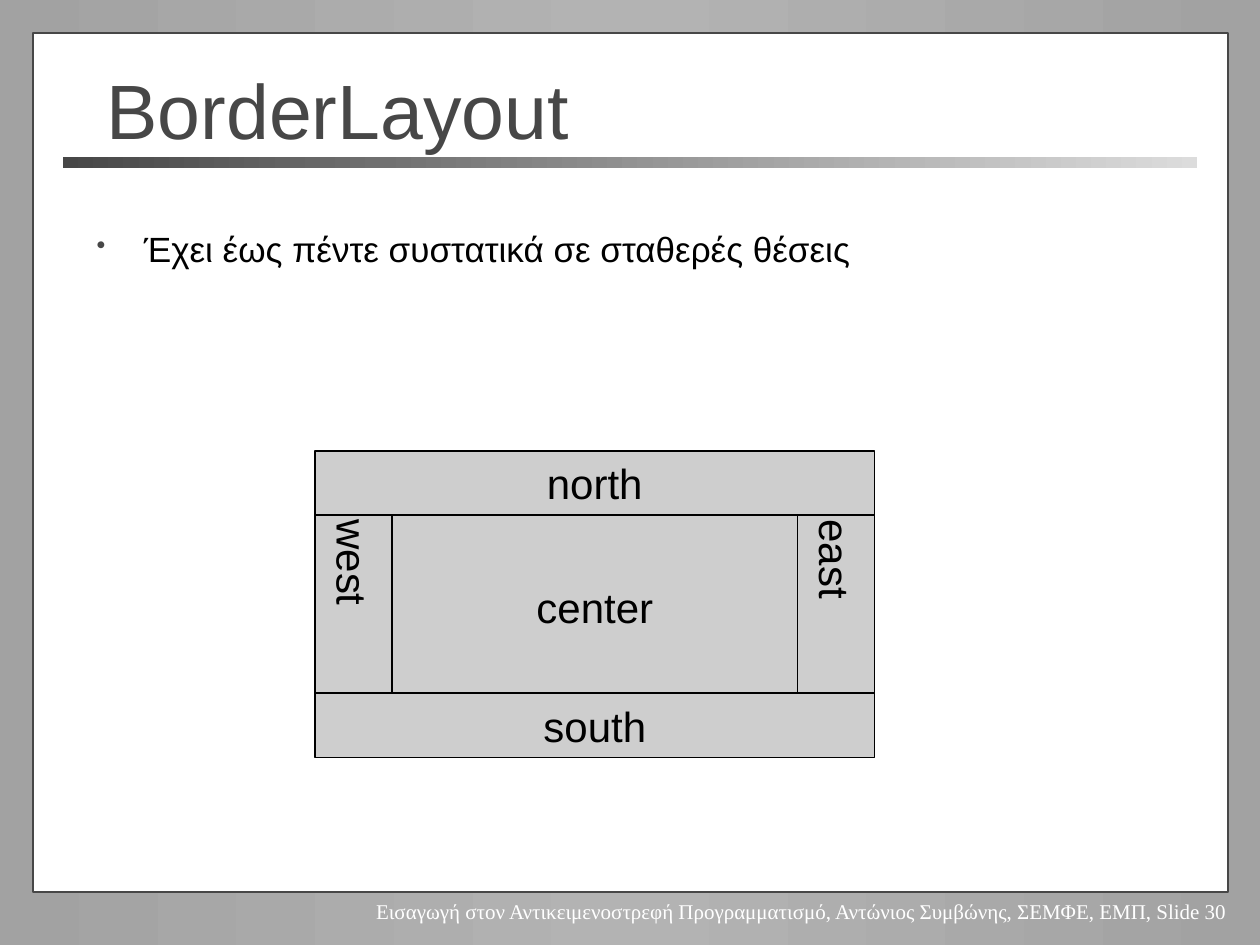
"""Builds a slide that shows the five regions of BorderLayout."""
from dataclasses import dataclass

from lxml.etree import SubElement
from pptx import Presentation
from pptx.dml.color import RGBColor
from pptx.enum.shapes import MSO_SHAPE as Shape
from pptx.enum.text import MSO_ANCHOR as Anchor, PP_ALIGN as Align
from pptx.oxml.ns import qn
from pptx.util import Cm, Pt

TITLE = "BorderLayout"
BULLET = "Έχει έως πέντε συστατικά σε σταθερές θέσεις"
FOOTER = ("Εισαγωγή στον Αντικειμενοστρεφή Προγραμματισμό, "
          "Αντώνιος Συμβώνης, ΣΕΜΦΕ, ΕΜΠ, Slide 30")


@dataclass(frozen=True)
class Theme:
    dark: str = "474747"
    black: str = "000000"
    white: str = "FFFFFF"
    region: str = "CECECE"
    backdrop: tuple = ((0, "A2A2A2"), (50, "B3B3B3"), (100, "A2A2A2"))
    rule: tuple = ((0, "474747"), (100, "DCDCDC"))
    font: str = "Arial"
    footer_font: str = "Times New Roman"
    title_size: int = 44
    region_size: int = 24
    body_size: int = 20
    footer_size: int = 12


THEME = Theme()

LEFT, TOP, WIDTH = 6.35, 9.09, 11.28
BAND, SIDE, MIDDLE = 1.3, 1.55, 3.58
MIDDLE_TOP = TOP + BAND
SOUTH_TOP = MIDDLE_TOP + MIDDLE
REGIONS = [
    ("center", (LEFT + SIDE, MIDDLE_TOP, WIDTH - 2 * SIDE, MIDDLE)),
    ("west", (LEFT, MIDDLE_TOP, SIDE, MIDDLE)),
    ("east", (LEFT + WIDTH - SIDE, MIDDLE_TOP, SIDE, MIDDLE)),
    ("south", (LEFT, SOUTH_TOP, WIDTH, BAND)),
    ("north", (LEFT, TOP, WIDTH, BAND)),
]


def set_gradient(owner, fill, stops):
    """Fill from left to right with the given stops."""
    fill.gradient()
    fill.gradient_angle = 0
    stop_list = owner.element.find(".//" + qn("a:gsLst"))
    for stop in list(stop_list):
        stop_list.remove(stop)
    for position, color in stops:
        stop = SubElement(stop_list, qn("a:gs"), pos=str(position * 1000))
        SubElement(stop, qn("a:srgbClr"), val=color)


def add_box(slide, box, fill=None, line=None):
    """Add a flat rectangle."""
    shape = slide.shapes.add_shape(Shape.RECTANGLE, *map(Cm, box))
    shape.shadow.inherit = False
    if fill:
        shape.fill.solid()
        shape.fill.fore_color.rgb = RGBColor.from_string(fill)
    if line:
        shape.line.color.rgb = RGBColor.from_string(line)
        shape.line.width = Pt(1)
    else:
        shape.line.fill.background()
    return shape


def write(shape, text, *, size, color=THEME.black, font=THEME.font,
          align=Align.LEFT, anchor=Anchor.MIDDLE, wrap=True, before=0):
    """Put one formatted paragraph in a shape and return it."""
    frame = shape.text_frame
    frame.word_wrap = wrap
    frame.vertical_anchor = anchor
    frame.margin_left = frame.margin_right = Cm(0.25)
    frame.margin_top = frame.margin_bottom = Cm(0.13)
    paragraph = frame.paragraphs[0]
    paragraph.alignment = align
    paragraph.space_before = Pt(before)
    run = paragraph.add_run()
    run.text = text
    run.font.size = Pt(size)
    run.font.name = font
    run.font.color.rgb = RGBColor.from_string(color)
    return paragraph


def add_bullet(paragraph, color):
    """Give a paragraph a small hanging bullet."""
    properties = paragraph._p.get_or_add_pPr()
    properties.set("marL", str(Cm(0.95)))
    properties.set("indent", str(-Cm(0.95)))
    bullet_color = SubElement(properties, qn("a:buClr"))
    SubElement(bullet_color, qn("a:srgbClr"), val=color)
    SubElement(properties, qn("a:buSzPct"), val="75000")
    SubElement(properties, qn("a:buChar"), char="•")


def add_frame(slide):
    """Add the backdrop, the white panel, the rule and the footer."""
    set_gradient(slide, slide.background.fill, THEME.backdrop)
    add_box(slide, (0.66, 0.66, 24.1, 17.32), THEME.white, THEME.dark)
    rule = add_box(slide, (1.27, 3.17, 22.86, 0.21))
    set_gradient(rule, rule.fill, THEME.rule)
    footer = slide.shapes.add_textbox(*map(Cm, (6.35, 17.98, 18.64, 0.77)))
    write(footer, FOOTER, size=THEME.footer_size, color=THEME.white,
          font=THEME.footer_font, align=Align.RIGHT, anchor=Anchor.TOP, wrap=False)


def add_title(slide):
    """Place the title above the panel."""
    title = slide.shapes.title
    slide.shapes.element.append(title.element)
    title.left, title.top, title.width, title.height = map(Cm, (1.9, 1.4, 21.6, 1.57))
    write(title, TITLE, size=THEME.title_size, color=THEME.dark)


def add_region(slide, name, box):
    """Add one region; the side regions have turned text."""
    shape = add_box(slide, box, THEME.region, THEME.black)
    turned = name in ("west", "east")
    write(shape, name, size=THEME.region_size,
          align=Align.LEFT if turned else Align.CENTER)
    frame = shape.text_frame
    if turned:
        frame.margin_top = Cm(0.08)
        frame._txBody.bodyPr.set("vert", "eaVert")
    elif name == "center":
        frame.margin_top = Cm(0.25)


def main():
    presentation = Presentation()
    presentation.slide_width, presentation.slide_height = Cm(25.4), Cm(19.05)
    slide = presentation.slides.add_slide(presentation.slide_layouts[5])
    add_frame(slide)
    add_title(slide)
    body = add_box(slide, (1.7, 4.45, 21.6, 4.5), THEME.white)
    add_bullet(write(body, BULLET, size=THEME.body_size, anchor=Anchor.TOP, before=4),
               THEME.dark)
    for name, box in REGIONS:
        add_region(slide, name, box)
    presentation.save("out.pptx")


if __name__ == "__main__":
    main()
